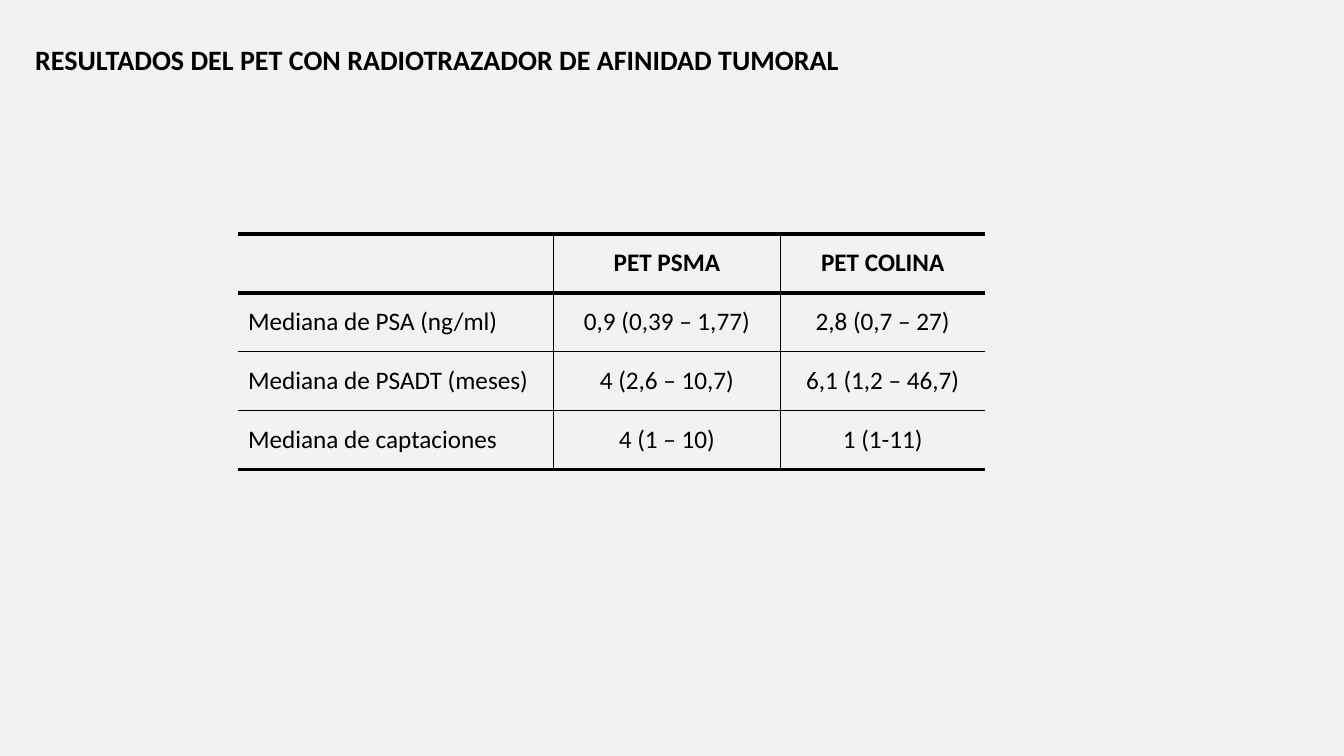
from lxml.etree import SubElement
from pptx import Presentation
from pptx.dml.color import RGBColor
from pptx.enum.text import MSO_ANCHOR as Anchor, MSO_AUTO_SIZE as AutoSize, PP_ALIGN as Align
from pptx.oxml.ns import qn
from pptx.util import Inches, Pt

TITLE = "RESULTADOS DEL PET CON RADIOTRAZADOR DE AFINIDAD TUMORAL"
ROWS = [
    ("", "PET PSMA", "PET COLINA"),
    ("Mediana de PSA (ng/ml)", "0,9 (0,39 – 1,77)", "2,8 (0,7 – 27)"),
    ("Mediana de PSADT (meses)", "4 (2,6 – 10,7)", "6,1 (1,2 – 46,7)"),
    ("Mediana de captaciones", "4 (1 – 10)", "1 (1-11)"),
]
COLUMN_WIDTHS = (3.13, 2.25, 2.03)
ROW_HEIGHT = 0.585
TABLE_LEFT, TABLE_TOP = 2.36, 2.32
ROW_RULES = (3, 3, 0.5, 0.5, 3)  # points, from the top edge to the bottom edge
COLUMN_RULES = (0, 1, 1, 0)  # points, from the left edge to the right edge
COLORS = {"background": "F2F2F2", "ink": "000000"}
FONT = "Calibri"
PLAIN_TABLE_STYLE = "{2D5ABB26-0587-4C30-8999-92F81FD0307C}"


def add_run(paragraph, text, size, bold):
    run = paragraph.add_run()
    run.text = text
    run.font.name = FONT
    run.font.size = Pt(size)
    run.font.bold = bold
    run.font.color.rgb = RGBColor.from_string(COLORS["ink"])


def set_borders(cell, widths):
    """Draw the cell's left, right, top and bottom rules; zero means none."""
    properties = cell._tc.get_or_add_tcPr()
    for side, width in zip("LRTB", widths):
        line = SubElement(properties, qn(f"a:ln{side}"), w=str(Pt(width)))
        if width:
            fill = SubElement(line, qn("a:solidFill"))
            SubElement(fill, qn("a:srgbClr"), val=COLORS["ink"])
        else:
            SubElement(line, qn("a:noFill"))


def add_title(slide):
    box = slide.shapes.add_textbox(Inches(0.25), Inches(0.21), Inches(13.08), Inches(0.55))
    frame = box.text_frame
    frame.word_wrap = True
    frame.auto_size = AutoSize.SHAPE_TO_FIT_TEXT
    paragraph = frame.paragraphs[0]
    paragraph.line_spacing = 1.5
    add_run(paragraph, TITLE, 20, True)


def add_results_table(slide):
    frame = slide.shapes.add_table(
        len(ROWS), len(COLUMN_WIDTHS), Inches(TABLE_LEFT), Inches(TABLE_TOP),
        Inches(sum(COLUMN_WIDTHS)), Inches(ROW_HEIGHT * len(ROWS)))
    table = frame.table
    table.first_row = table.horz_banding = False
    table._tbl.tblPr.find(qn("a:tableStyleId")).text = PLAIN_TABLE_STYLE
    for column, width in zip(table.columns, COLUMN_WIDTHS):
        column.width = Inches(width)
    for row_index, texts in enumerate(ROWS):
        table.rows[row_index].height = Inches(ROW_HEIGHT)
        for column_index, text in enumerate(texts):
            cell = table.cell(row_index, column_index)
            cell.vertical_anchor = Anchor.MIDDLE
            set_borders(cell, COLUMN_RULES[column_index:column_index + 2]
                        + ROW_RULES[row_index:row_index + 2])
            cell.fill.background()
            paragraph = cell.text_frame.paragraphs[0]
            paragraph.alignment = Align.CENTER if column_index else Align.LEFT
            if text:
                add_run(paragraph, text, 18, row_index == 0)


def main():
    presentation = Presentation()
    presentation.slide_width = Inches(13.33)
    presentation.slide_height = Inches(7.5)
    slide = presentation.slides.add_slide(presentation.slide_layouts[6])
    background = slide.background.fill
    background.solid()
    background.fore_color.rgb = RGBColor.from_string(COLORS["background"])
    add_title(slide)
    add_results_table(slide)
    presentation.save("out.pptx")


if __name__ == "__main__":
    main()
